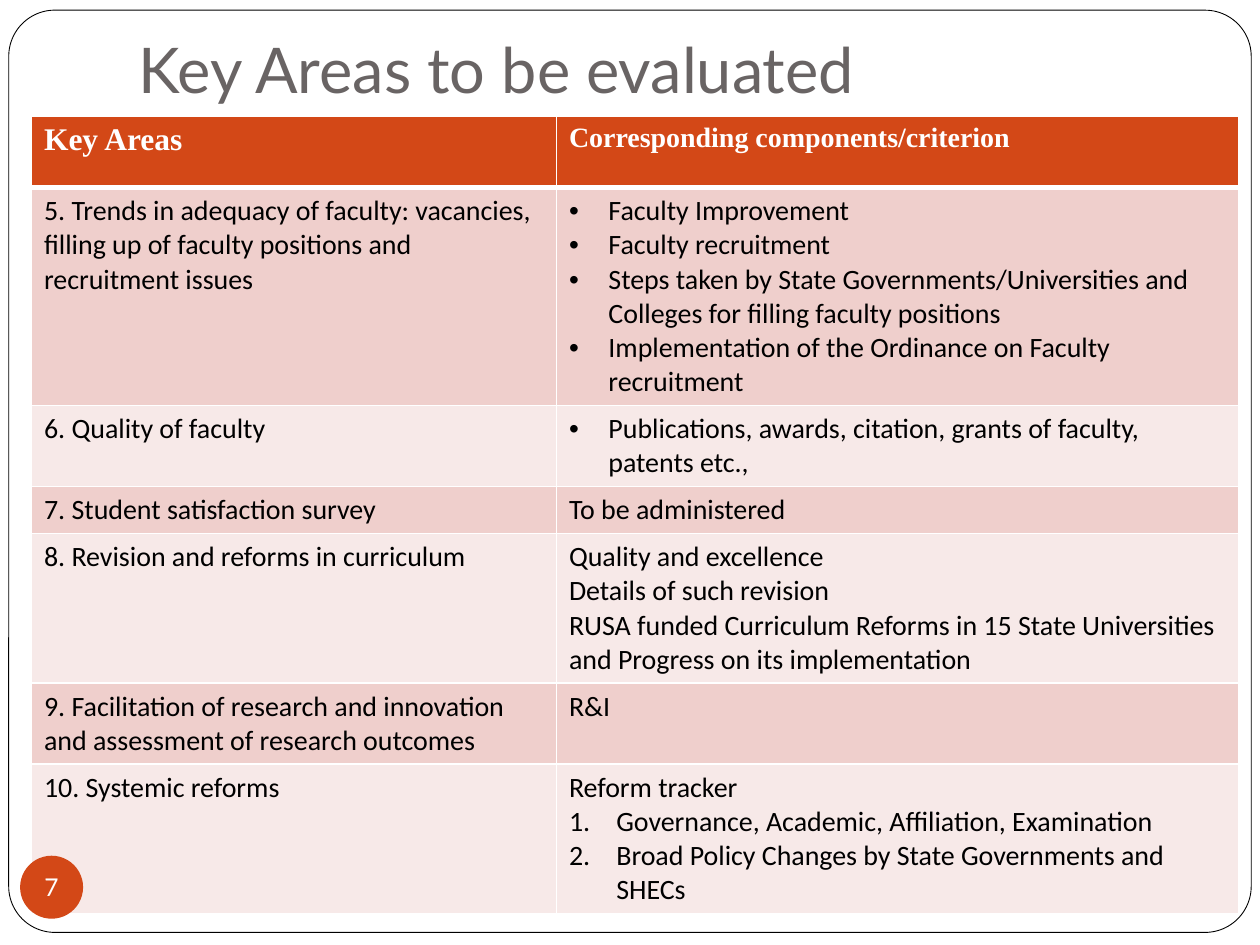
import pptx
import pptx.dml.color
import pptx.enum.shapes
import pptx.enum.text
import pptx.oxml.ns
import pptx.util
from lxml import etree

Pt = pptx.util.Pt
RGBColor = pptx.dml.color.RGBColor
MSO_SHAPE = pptx.enum.shapes.MSO_SHAPE
PP_ALIGN = pptx.enum.text.PP_ALIGN
MSO_ANCHOR = pptx.enum.text.MSO_ANCHOR
MSO_AUTO_SIZE = pptx.enum.text.MSO_AUTO_SIZE
qn = pptx.oxml.ns.qn

WHITE = RGBColor(0xFF, 0xFF, 0xFF)
BLACK = RGBColor(0x00, 0x00, 0x00)
GREY = RGBColor(0x69, 0x64, 0x64)
ORANGE = RGBColor(0xD3, 0x48, 0x17)
BANDS = (RGBColor(0xEF, 0xCF, 0xCC), RGBColor(0xF7, 0xE9, 0xE8))

TITLE_FONT = {"name": "Lato", "size": Pt(36), "bold": False}
BADGE_FONT = {"name": "Lato", "size": Pt(14)}
BODY_FONT = {"name": "Calibri", "size": Pt(16), "bold": False}
HEADER_FONT = {"name": "Times New Roman", "bold": True}

LINE_PITCH = 19.5
CELL_PADDING = 7.2
HEADER_HEIGHT = 41
COLUMN_WIDTHS = (300, 390)

# List kind: (indent in points, bullet tag, bullet attributes)
LISTS = {
    "bullet": (22.5, "a:buChar", {"char": "•"}),
    "number": (27, "a:buAutoNum", {"type": "arabicPeriod"}),
}

HEADERS = (("Key Areas", Pt(18)), ("Corresponding components/criterion", Pt(16)))

# Each row: key area, components as (list kind, text), lines of text in the row
KEY_AREAS = (
    ("5. Trends in adequacy of faculty: vacancies, filling up of faculty "
     "positions and recruitment issues",
     (("bullet", "Faculty Improvement"),
      ("bullet", "Faculty recruitment"),
      ("bullet", "Steps taken by State Governments/Universities and Colleges "
                 "for filling faculty positions"),
      ("bullet", "Implementation of the Ordinance on Faculty recruitment")), 6),
    ("6. Quality of faculty",
     (("bullet", "Publications, awards, citation, grants of faculty, patents etc.,"),), 2),
    ("7. Student satisfaction survey", ((None, "To be administered"),), 1),
    ("8. Revision and reforms in curriculum",
     ((None, "Quality and excellence"),
      (None, "Details of such revision"),
      (None, "RUSA funded Curriculum Reforms in 15 State Universities and "
             "Progress on its implementation")), 4),
    ("9. Facilitation of research and innovation and assessment of research outcomes",
     ((None, "R&I"),), 2),
    ("10. Systemic reforms",
     ((None, "Reform tracker"),
      ("number", "Governance, Academic, Affiliation, Examination"),
      ("number", "Broad Policy Changes by State Governments and SHECs")), 4),
)


def set_values(target, values):
    for name, value in values.items():
        setattr(target, name, value)


def write_run(paragraph, text, font_values, color):
    run = paragraph.add_run()
    run.text = text
    set_values(run.font, font_values)
    run.font.color.rgb = color


def set_list_marker(paragraph, kind):
    indent, tag, attributes = LISTS[kind]
    properties = paragraph._p.get_or_add_pPr()
    properties.set("marL", str(Pt(indent)))
    properties.set("indent", str(-Pt(indent)))
    etree.SubElement(properties, qn("a:buFont"), typeface="Arial")
    etree.SubElement(properties, qn(tag), attributes)


def set_borders(cell, widths):
    """Draw white borders; widths maps the side letters L, R, T, B to points."""
    properties = cell._tc.get_or_add_tcPr()
    for position, (side, width) in enumerate(widths.items()):
        line = etree.Element(qn(f"a:ln{side}"), w=str(Pt(width)))
        fill = etree.SubElement(line, qn("a:solidFill"))
        etree.SubElement(fill, qn("a:srgbClr"), val=str(WHITE))
        properties.insert(position, line)


def fill_cell(cell, color, border_widths):
    cell.fill.solid()
    cell.fill.fore_color.rgb = color
    set_borders(cell, border_widths)


def write_components(cell, components):
    frame = cell.text_frame
    for index, (kind, text) in enumerate(components):
        paragraph = frame.add_paragraph() if index else frame.paragraphs[0]
        if kind:
            set_list_marker(paragraph, kind)
        write_run(paragraph, text, BODY_FONT, BLACK)


def add_plain_shape(slide, preset, left, top, width, height, color):
    shape = slide.shapes.add_shape(preset, Pt(left), Pt(top), Pt(width), Pt(height))
    shape.shadow.inherit = False
    shape.fill.solid()
    shape.fill.fore_color.rgb = color
    return shape


def format_title(title):
    set_values(title, {"left": Pt(72), "top": Pt(21.6),
                       "width": Pt(612), "height": Pt(90)})
    # The deep bottom margin lifts the title clear of the table
    set_values(title.text_frame, {
        "auto_size": MSO_AUTO_SIZE.NONE, "word_wrap": True,
        "vertical_anchor": MSO_ANCHOR.BOTTOM, "margin_left": Pt(7.2),
        "margin_right": Pt(7.2), "margin_top": Pt(0), "margin_bottom": Pt(51)})
    paragraph = title.text_frame.paragraphs[0]
    paragraph.alignment = PP_ALIGN.LEFT
    write_run(paragraph, "Key Areas to be evaluated", TITLE_FONT, GREY)


def add_page_frame(slide):
    page_frame = add_plain_shape(slide, MSO_SHAPE.ROUNDED_RECTANGLE,
                                 5, 5.8, 710, 527, WHITE)
    page_frame.adjustments[0] = 0.05
    page_frame.line.color.rgb = BLACK
    page_frame.line.width = Pt(0.5)
    slide.shapes.title.element.addprevious(page_frame.element)


def add_key_area_table(slide):
    heights = [HEADER_HEIGHT] + [lines * LINE_PITCH + CELL_PADDING
                                 for _, _, lines in KEY_AREAS]
    table = slide.shapes.add_table(
        len(heights), len(COLUMN_WIDTHS), Pt(18), Pt(66.2),
        Pt(sum(COLUMN_WIDTHS)), Pt(sum(heights))).table
    for column, width in zip(table.columns, COLUMN_WIDTHS):
        column.width = Pt(width)
    for row, height in zip(table.rows, heights):
        row.height = Pt(height)

    for cell, (text, size) in zip(table.rows[0].cells, HEADERS):
        fill_cell(cell, ORANGE, {"L": 1, "R": 1, "T": 1, "B": 3})
        write_run(cell.text_frame.paragraphs[0], text,
                  {**HEADER_FONT, "size": size}, WHITE)

    for index, (area, components, _) in enumerate(KEY_AREAS):
        area_cell, component_cell = table.rows[index + 1].cells
        top_width = 1 if index else 3
        for cell in (area_cell, component_cell):
            fill_cell(cell, BANDS[index % 2], {"L": 1, "R": 1, "T": top_width, "B": 1})
        write_components(area_cell, ((None, area),))
        write_components(component_cell, components)
    table.cell(2, 0).text_frame.paragraphs[0].alignment = PP_ALIGN.JUSTIFY


def add_page_badge(slide, number):
    badge = add_plain_shape(slide, MSO_SHAPE.OVAL, 11.5, 489, 36, 36, ORANGE)
    badge.line.fill.background()
    set_values(badge.text_frame, {
        "word_wrap": False, "vertical_anchor": MSO_ANCHOR.MIDDLE,
        "margin_left": 0, "margin_right": 0, "margin_top": 0, "margin_bottom": 0})
    paragraph = badge.text_frame.paragraphs[0]
    paragraph.alignment = PP_ALIGN.CENTER
    write_run(paragraph, number, BADGE_FONT, WHITE)


def main():
    presentation = pptx.Presentation()
    presentation.slide_width = Pt(720)
    presentation.slide_height = Pt(540)
    slide = presentation.slides.add_slide(presentation.slide_layouts[5])
    format_title(slide.shapes.title)
    add_page_frame(slide)
    add_key_area_table(slide)
    add_page_badge(slide, "7")
    presentation.save("out.pptx")


if __name__ == "__main__":
    main()
